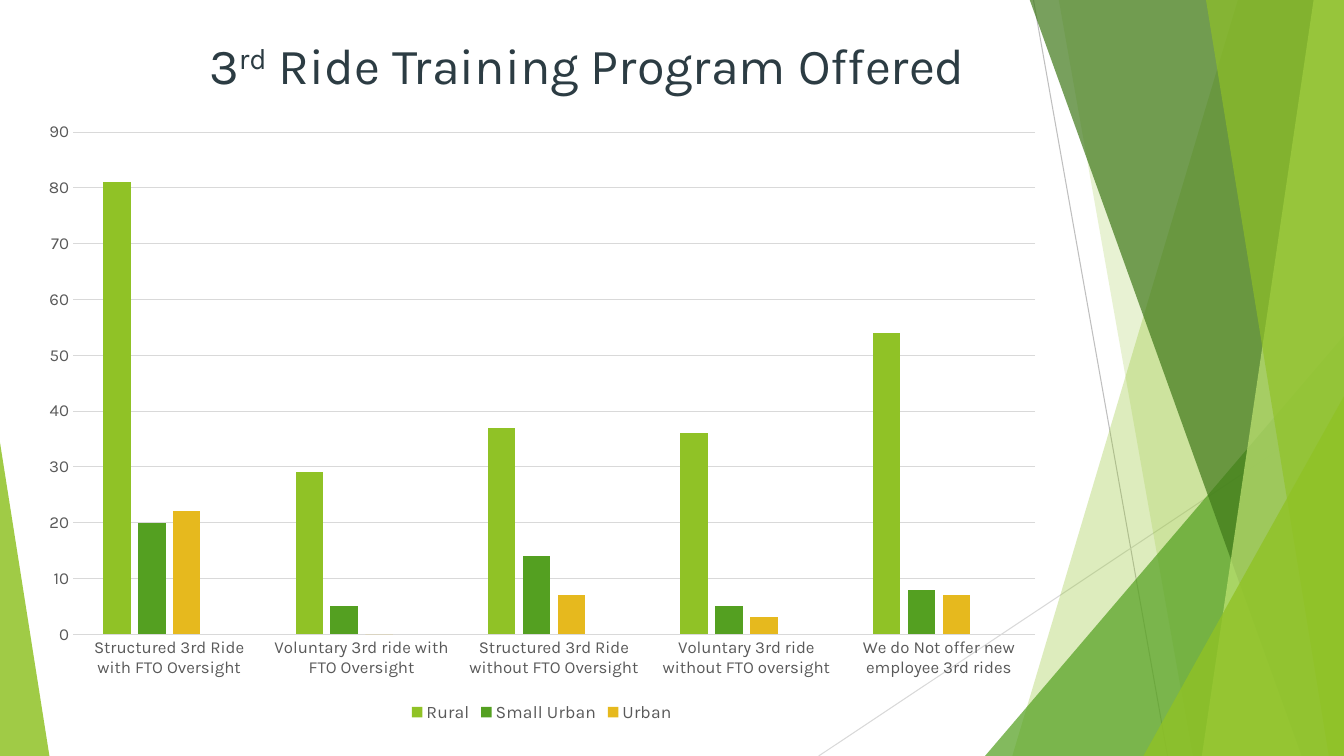
from lxml.etree import SubElement as Sub
from pptx import Presentation
from pptx.chart.data import CategoryChartData as Data
from pptx.dml.color import RGBColor as RGB
from pptx.enum.chart import XL_CHART_TYPE as Kind, XL_LEGEND_POSITION as Spot, XL_TICK_MARK as Tick
from pptx.enum.shapes import MSO_CONNECTOR as Link, MSO_SHAPE as Form
from pptx.enum.text import MSO_ANCHOR as Anchor, PP_ALIGN as Align
from pptx.oxml.ns import qn
from pptx.util import Inches, Pt

theme = {
    "font": "Karla", "title": "2C3C43", "label": "595959", "rule": "D9D9D9",
    "edge": "BFBFBF", "lime": "90C226", "green": "54A021", "dark": "3F7819",
    "pale": "C0E474", "gold": "E6B91E", "rust": "E76618",
    "head": Pt(36), "tick": Pt(12), "key": Pt(12.5), "thin": Pt(0.75),
}


def hue(name):
    return RGB.from_string(theme[name])


def paint(shape, name, alpha):
    shape.shadow.inherit = False
    shape.line.fill.background()
    shape.fill.solid()
    shape.fill.fore_color.rgb = hue(name)
    color = shape._element.spPr.find(qn("a:solidFill"))[0]
    Sub(color, qn("a:alpha")).set("val", str(alpha * 1000))


deck = Presentation()
deck.slide_width, deck.slide_height = Inches(13.33), Inches(7.5)
slide = deck.slides.add_slide(deck.slide_layouts[6])
shapes = slide.shapes
top, right, base = -0.01, 13.33, 7.5

for ends, name in [((10.25, 0, 11.58, base), "edge"), ((right, 4.03, 8.12, base), "rule")]:
    line = shapes.add_connector(Link.STRAIGHT, *map(Inches, ends))
    line.line.color.rgb = hue(name)
    line.line.width = theme["thin"]
    Sub(line._element.spPr, qn("a:effectLst"))

shards = [
    ("band", 12.28, 10.04, "lime", 30),
    ("band", 10.5, 11.83, "lime", 20),
    ("peak", 9.77, 3.33, "green", 72),
    ("band", 10.21, 12.91, "dark", 70),
    ("band", 13.03, 11.92, "pale", 70),
    ("band", 11.96, 13.18, "lime", 65),
    ("peak", 11.34, 3.93, "lime", 80),
]
for form, start, end, name, alpha in shards:
    if form == "band":
        path = shapes.build_freeform(Inches(start), Inches(top))
        points = [(right, top), (right, base), (end, base)]
        path.add_line_segments([(Inches(x), Inches(y)) for x, y in points], close=True)
        shard = path.convert_to_shape()
    else:
        box = map(Inches, (start, end, right - start, base - end))
        shard = shapes.add_shape(Form.ISOSCELES_TRIANGLE, *box)
        shard.adjustments[0] = 1
    paint(shard, name, alpha)

wedge = shapes.add_shape(Form.ISOSCELES_TRIANGLE, 0, Inches(4.39), Inches(0.49), Inches(3.11))
wedge.adjustments[0] = 0
paint(wedge, "lime", 85)

title = shapes.add_textbox(Inches(0.9), Inches(0.29), Inches(9.73), Inches(1.18))
frame = title.text_frame
frame.word_wrap = True
frame.vertical_anchor = Anchor.TOP
head = frame.paragraphs[0]
head.alignment = Align.CENTER
for text in (" 3", "rd", " Ride Training Program Offered"):
    run = head.add_run()
    run.text = text
    run.font.name = theme["font"]
    run.font.size = theme["head"]
    run.font.color.rgb = hue("title")
head.runs[1]._r.get_or_add_rPr().set("baseline", "30000")

data = Data()
data.categories = [
    "Structured 3rd Ride with FTO Oversight",
    "Voluntary 3rd ride with FTO Oversight",
    "Structured 3rd Ride without FTO Oversight",
    "Voluntary 3rd ride without FTO oversight",
    "We do Not offer new employee 3rd rides",
]
series = [
    ("Rural", (81, 29, 37, 36, 54), "lime"),
    ("Small Urban", (20, 5, 14, 5, 8), "green"),
    ("Urban", (22, 0, 7, 3, 7), "gold"),
    ("Series 4", (None,) * 5, "rust"),
]
for name, values, color in series:
    data.add_series(name, values)

area = map(Inches, (0.28, 1.09, 10.19, 6.12))
chart = shapes.add_chart(Kind.COLUMN_CLUSTERED, *area, data).chart
chart.has_title = False
chart.font.name = theme["font"]
chart.has_legend = True
key = chart.legend
key.position = Spot.BOTTOM
key.include_in_layout = False

plot = chart.plots[0]
plot.gap_width = 219
plot.overlap = -27
plot.vary_by_categories = False
for bar, (name, values, color) in zip(plot.series, series):
    bar.format.fill.solid()
    bar.format.fill.fore_color.rgb = hue(color)

cats, scale = chart.category_axis, chart.value_axis
for part, size in [(cats.tick_labels, "tick"), (scale.tick_labels, "tick"), (key, "key")]:
    part.font.name = theme["font"]
    part.font.size = theme[size]
    part.font.color.rgb = hue("label")
for axis in (cats, scale):
    axis.major_tick_mark = axis.minor_tick_mark = Tick.NONE
scale.minimum_scale, scale.maximum_scale, scale.major_unit = 0, 90, 10
scale.has_major_gridlines = True
scale.format.line.fill.background()
for rule in (cats.format.line, scale.major_gridlines.format.line):
    rule.color.rgb = hue("rule")
    rule.width = theme["thin"]

entry = Sub(key._element, qn("c:legendEntry"))
Sub(entry, qn("c:idx")).set("val", "3")
Sub(entry, qn("c:delete")).set("val", "1")
key._element.find(qn("c:legendPos")).addnext(entry)

deck.save("out.pptx")
